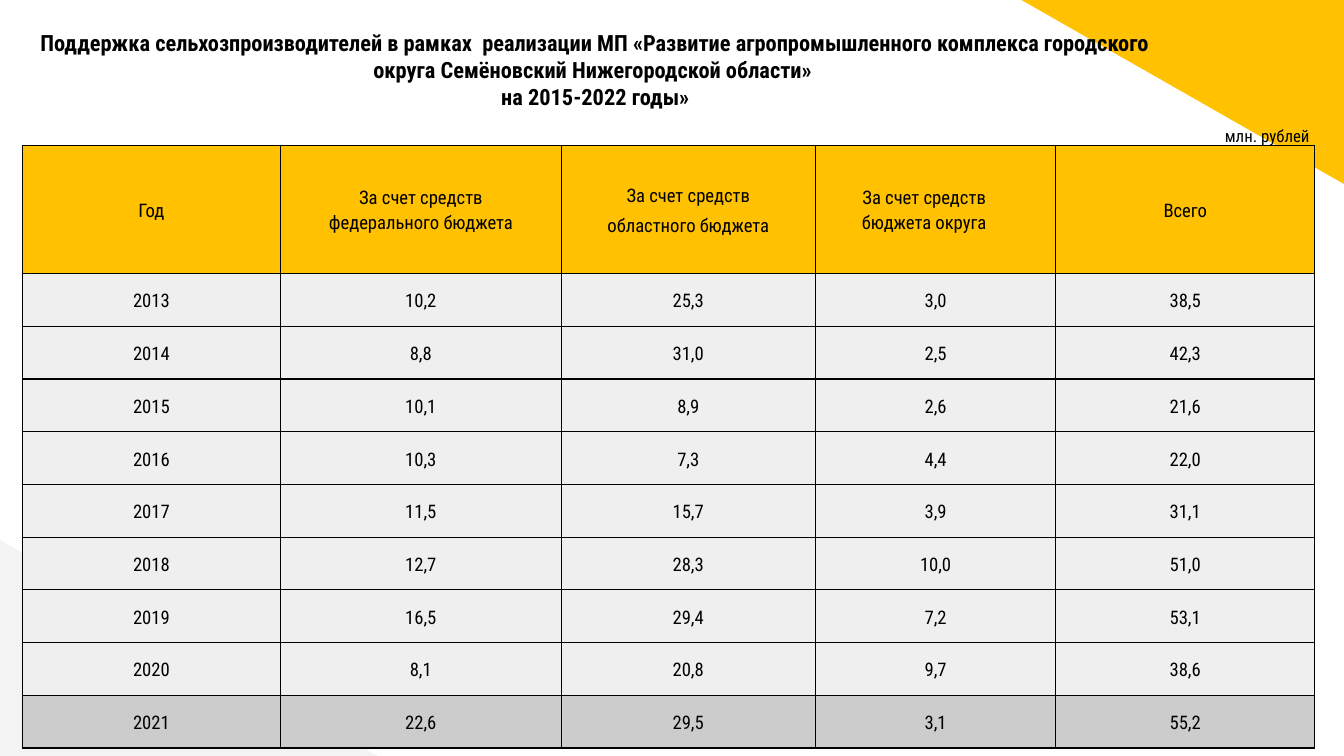
from lxml import etree
from pptx import Presentation
from pptx.dml.color import RGBColor
from pptx.enum import shapes, text
from pptx.oxml import ns
from pptx.util import Pt

AMBER = RGBColor(0xFF, 0xC1, 0x00)
PALE = RGBColor(0xF3, 0xF3, 0xF3)
BODY = RGBColor(0xEF, 0xEF, 0xEF)
LATEST = RGBColor(0xCC, 0xCC, 0xCC)
BLACK = RGBColor(0, 0, 0)
FONT = "Roboto Condensed"

WIDTH, HEIGHT = 720, 405
TITLE = (
    "Поддержка сельхозпроизводителей в рамках  реализации МП «Развитие "
    "агропромышленного комплекса городского округа Семёновский "
    "Нижегородской области» \vна 2015-2022 годы»"
)
HEADINGS = [
    "Год",
    "За счет средств\nфедерального бюджета",
    "За счет средств\nобластного бюджета",
    "За счет средств\vбюджета округа",
    "Всего",
]
SUPPORT = [
    ("2013", "10,2", "25,3", "3,0", "38,5"),
    ("2014", "8,8", "31,0", "2,5", "42,3"),
    ("2015", "10,1", "8,9", "2,6", "21,6"),
    ("2016", "10,3", "7,3", "4,4", "22,0"),
    ("2017", "11,5", "15,7", "3,9", "31,1"),
    ("2018", "12,7", "28,3", "10,0", "51,0"),
    ("2019", "16,5", "29,4", "7,2", "53,1"),
    ("2020", "8,1", "20,8", "9,7", "38,6"),
    ("2021", "22,6", "29,5", "3,1", "55,2"),
]
COLUMN_WIDTHS = [138.2, 150.5, 136.1, 128.9, 138.6]
HEADER_HEIGHT = 68.8


def style_text(tf, size, align, bold=False):
    for p in tf.paragraphs:
        p.alignment = align
        for r in p.runs:
            r.font.name = FONT
            r.font.size = Pt(size)
            r.font.bold = bold
            r.font.color.rgb = BLACK


def add_corner(s, box, color, rotation=0):
    sp = s.shapes.add_shape(shapes.MSO_SHAPE.RIGHT_TRIANGLE, *map(Pt, box))
    sp.shadow.inherit = False
    sp.rotation = rotation
    sp.fill.solid()
    sp.fill.fore_color.rgb = color
    sp.line.fill.background()


def add_label(s, box, content, size, align, margins, bold=False):
    """Margins are left, top, right, bottom."""
    tf = s.shapes.add_textbox(*map(Pt, box)).text_frame
    tf.word_wrap = True
    tf.margin_left, tf.margin_top, tf.margin_right, tf.margin_bottom = map(Pt, margins)
    tf.text = content
    style_text(tf, size, align, bold)


def add_borders(cell):
    tc_pr = cell._tc.get_or_add_tcPr()
    for side in "LRTB":
        ln = etree.SubElement(tc_pr, ns.qn(f"a:ln{side}"), w=str(Pt(0.75)))
        fill = etree.SubElement(ln, ns.qn("a:solidFill"))
        etree.SubElement(fill, ns.qn("a:srgbClr"), val=str(BLACK))


def fill_cell(cell, content, color):
    add_borders(cell)
    cell.fill.solid()
    cell.fill.fore_color.rgb = color
    cell.margin_left = cell.margin_right = Pt(7.2)
    cell.margin_top = cell.margin_bottom = Pt(7.2)
    cell.vertical_anchor = text.MSO_ANCHOR.MIDDLE
    tf = cell.text_frame
    tf.text = content
    style_text(tf, 10, text.PP_ALIGN.CENTER)
    for p in tf.paragraphs:
        p.line_spacing = 1.15


def add_support_table(s, box):
    rows = [HEADINGS, *SUPPORT]
    table = s.shapes.add_table(len(rows), len(HEADINGS), *map(Pt, box)).table
    table.first_row = table.horz_banding = False
    for column, width in zip(table.columns, COLUMN_WIDTHS):
        column.width = Pt(width)
    row_height = (box[3] - HEADER_HEIGHT) / len(SUPPORT)
    for i, values in enumerate(rows):
        table.rows[i].height = Pt(row_height if i else HEADER_HEIGHT)
        color = AMBER if i == 0 else LATEST if i == len(SUPPORT) else BODY
        for j, value in enumerate(values):
            fill_cell(table.cell(i, j), value, color)
    # The regional heading is spaced apart; the district one sits left of centre.
    table.cell(0, 2).text_frame.paragraphs[1].space_before = Pt(3)
    table.cell(0, 3).margin_right = Pt(19.5)


def add_support_slide(prs):
    s = prs.slides.add_slide(prs.slide_layouts[6])
    add_corner(s, (0, 289.4, 202.3, 115.6), PALE)
    add_corner(s, (547.2, 0, 172.8, 98.6), AMBER, 180)
    add_label(s, (0, 8.6, 638, 45.4), TITLE, 12, text.PP_ALIGN.CENTER,
              (7.2, 7.2, 7.2, 7.2), bold=True)
    add_support_table(s, (12, 77.8, sum(COLUMN_WIDTHS), 319))
    add_label(s, (655.2, 65.5, 78.5, 12.2), "млн. рублей", 9,
              text.PP_ALIGN.LEFT, (1, 1.8, 0, 0))


def main():
    prs = Presentation()
    prs.slide_width, prs.slide_height = Pt(WIDTH), Pt(HEIGHT)
    add_support_slide(prs)
    prs.save("out.pptx")


if __name__ == "__main__":
    main()
